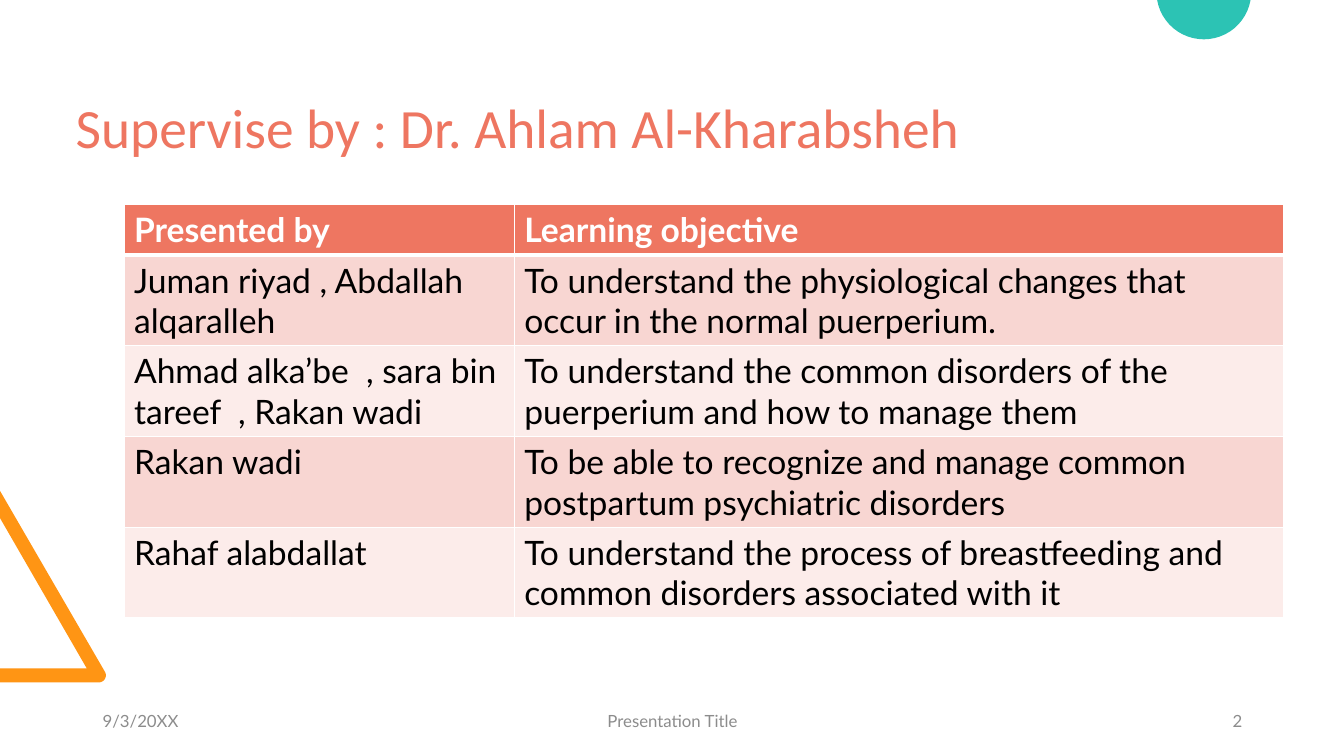
from math import asin, cos, pi, sin

from lxml.etree import SubElement
from pptx import Presentation
from pptx.dml.color import RGBColor
from pptx.enum.text import MSO_ANCHOR as Anchor, PP_ALIGN as Align
from pptx.oxml.ns import qn
from pptx.util import Inches, Pt

# Content
TITLE = "Supervise by : Dr. Ahlam Al-Kharabsheh"
ROWS = [
    ("Presented by", "Learning objective"),
    ("Juman riyad , Abdallah alqaralleh",
     "To understand the physiological changes that occur in the normal puerperium."),
    ("Ahmad alka’be  , sara bin tareef  , Rakan wadi",
     "To understand the common disorders of the puerperium and how to manage them"),
    ("Rakan wadi",
     "To be able to recognize and manage common postpartum psychiatric disorders"),
    ("Rahaf alabdallat",
     "To understand the process of breastfeeding and common disorders associated with it"),
]
# Footer: text, left, width, alignment
FOOTER = [
    ("9/3/20XX", 0.92, 3, Align.LEFT),
    ("Presentation Title", 4.42, 4.5, Align.CENTER),
    ("2", 9.42, 3, Align.RIGHT),
]

# Style
CORAL = RGBColor(0xEE, 0x76, 0x61)
ROSE = RGBColor(0xF8, 0xD6, 0xD2)
BLUSH = RGBColor(0xFC, 0xEC, 0xEA)
ORANGE = RGBColor(0xFF, 0x95, 0x14)
TEAL = RGBColor(0x2C, 0xC3, 0xB4)
GRAY = RGBColor(0x8C, 0x8C, 0x8C)
BLACK = RGBColor(0, 0, 0)
WHITE = RGBColor(255, 255, 255)

# Layout in inches
WIDE, HIGH = 13.33, 7.5
COLS = (3.87, 7.63)
HEAD_ROW, BODY_ROW = 0.49, 0.9


def style(para, face, size, color, bold=False):
    for run in para.runs:
        font = run.font
        font.name, font.size, font.bold = face, Pt(size), bold
        font.color.rgb = color


def arc(x, y, r, start, end, steps=24):
    turn = (end - start) / steps
    return [(x + r * cos(start + i * turn), y + r * sin(start + i * turn))
            for i in range(steps + 1)]


def outline(slide, points, color):
    dots = [(Inches(x), Inches(y)) for x, y in points]
    build = slide.shapes.build_freeform(*dots[0])
    build.add_line_segments(dots[1:], close=True)
    shape = build.convert_to_shape()
    shape.shadow.inherit = False
    shape.fill.solid()
    shape.fill.fore_color.rgb = color
    shape.line.fill.background()


def border(cell, side, width):
    line = SubElement(cell._tc.get_or_add_tcPr(), qn("a:" + side), w=str(Pt(width)))
    fill = SubElement(line, qn("a:solidFill"))
    SubElement(fill, qn("a:srgbClr"), val=str(WHITE))


deck = Presentation()
deck.slide_width, deck.slide_height = Inches(WIDE), Inches(HIGH)
slide = deck.slides.add_slide(deck.slide_layouts[5])

# Title
title = slide.shapes.title
title.left, title.top = Inches(0.65), Inches(1.03)
title.width, title.height = Inches(11.5), Inches(0.53)
frame = title.text_frame
frame.text = TITLE
frame.vertical_anchor = Anchor.MIDDLE
para = frame.paragraphs[0]
para.alignment, para.line_spacing = Align.LEFT, 0.9
style(para, "Calibri", 39.6, CORAL)

# Corner shapes: cropped triangle and circle
tip = arc(0.98, 6.7, 0.07, -pi / 6, pi / 2)
outline(slide, [(0, 6.77), (0, 6.63), (0.86, 6.63), (0, 5.14), (0, 4.87)] + tip, ORANGE)
rad, lift = 0.47, 0.08
cut = asin(lift / rad)
outline(slide, arc(11.94, -lift, rad, cut, pi - cut), TEAL)

# Table
grid = slide.shapes.add_table(
    len(ROWS), len(COLS), Inches(1.23), Inches(2.03), Inches(sum(COLS)),
    Inches(HEAD_ROW + BODY_ROW * (len(ROWS) - 1))).table
for col, width in zip(grid.columns, COLS):
    col.width = Inches(width)
for r, texts in enumerate(ROWS):
    head = r == 0
    grid.rows[r].height = Inches(HEAD_ROW if head else BODY_ROW)
    for c, text in enumerate(texts):
        cell = grid.cell(r, c)
        cell.text = text
        style(cell.text_frame.paragraphs[0], "Lato", 24, WHITE if head else BLACK, head)
        for side in ("lnL", "lnR", "lnT", "lnB"):
            thick = (r, side) in ((0, "lnB"), (1, "lnT"))
            border(cell, side, 3 if thick else 1)
        cell.fill.solid()
        cell.fill.fore_color.rgb = CORAL if head else ROSE if r % 2 else BLUSH

# Footer
for text, left, width, align in FOOTER:
    box = slide.shapes.add_textbox(Inches(left), Inches(6.95), Inches(width), Inches(0.4))
    frame = box.text_frame
    frame.word_wrap = True
    frame.vertical_anchor = Anchor.MIDDLE
    frame.text = text
    frame.paragraphs[0].alignment = align
    style(frame.paragraphs[0], "Lato", 12, GRAY)

deck.save("out.pptx")
